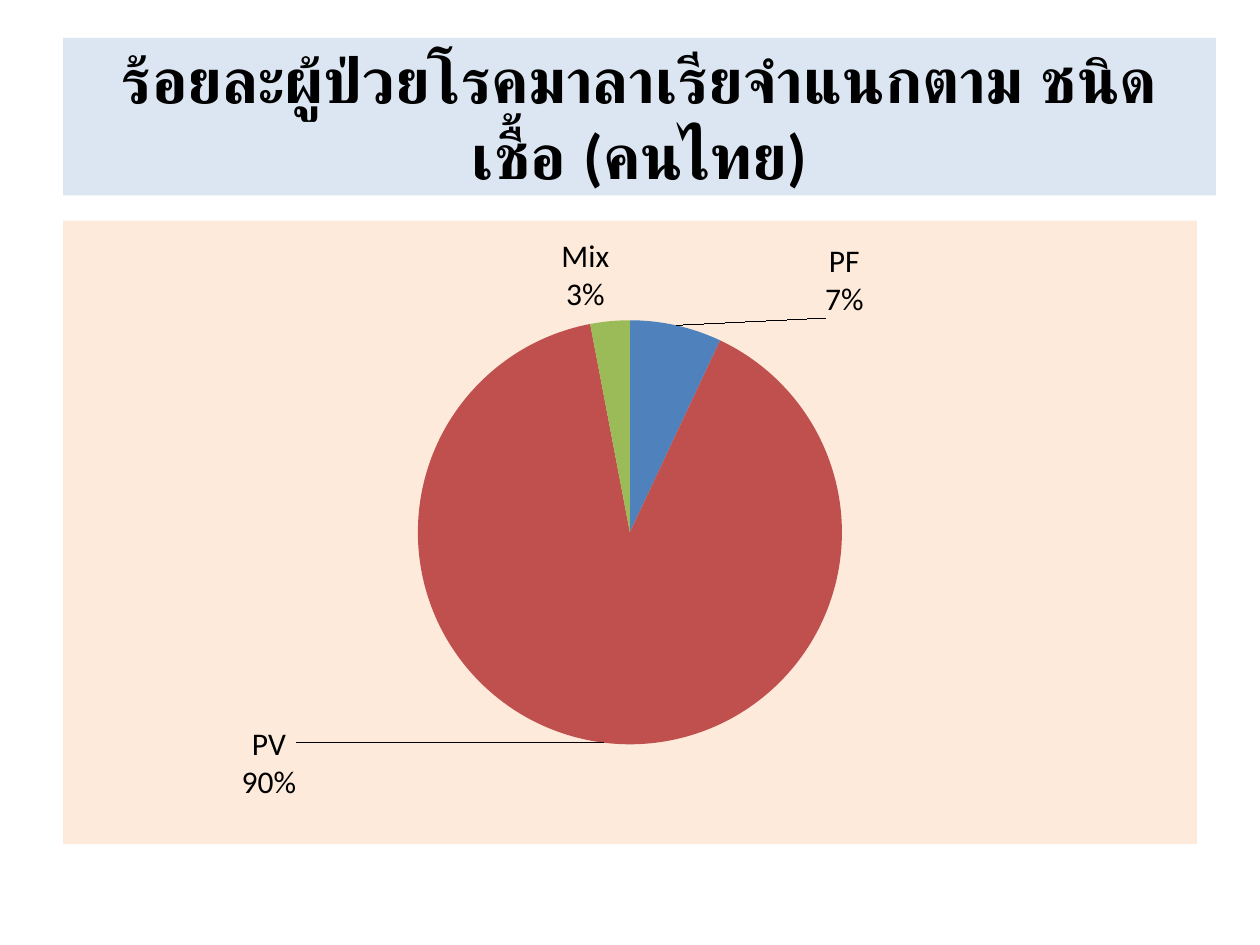
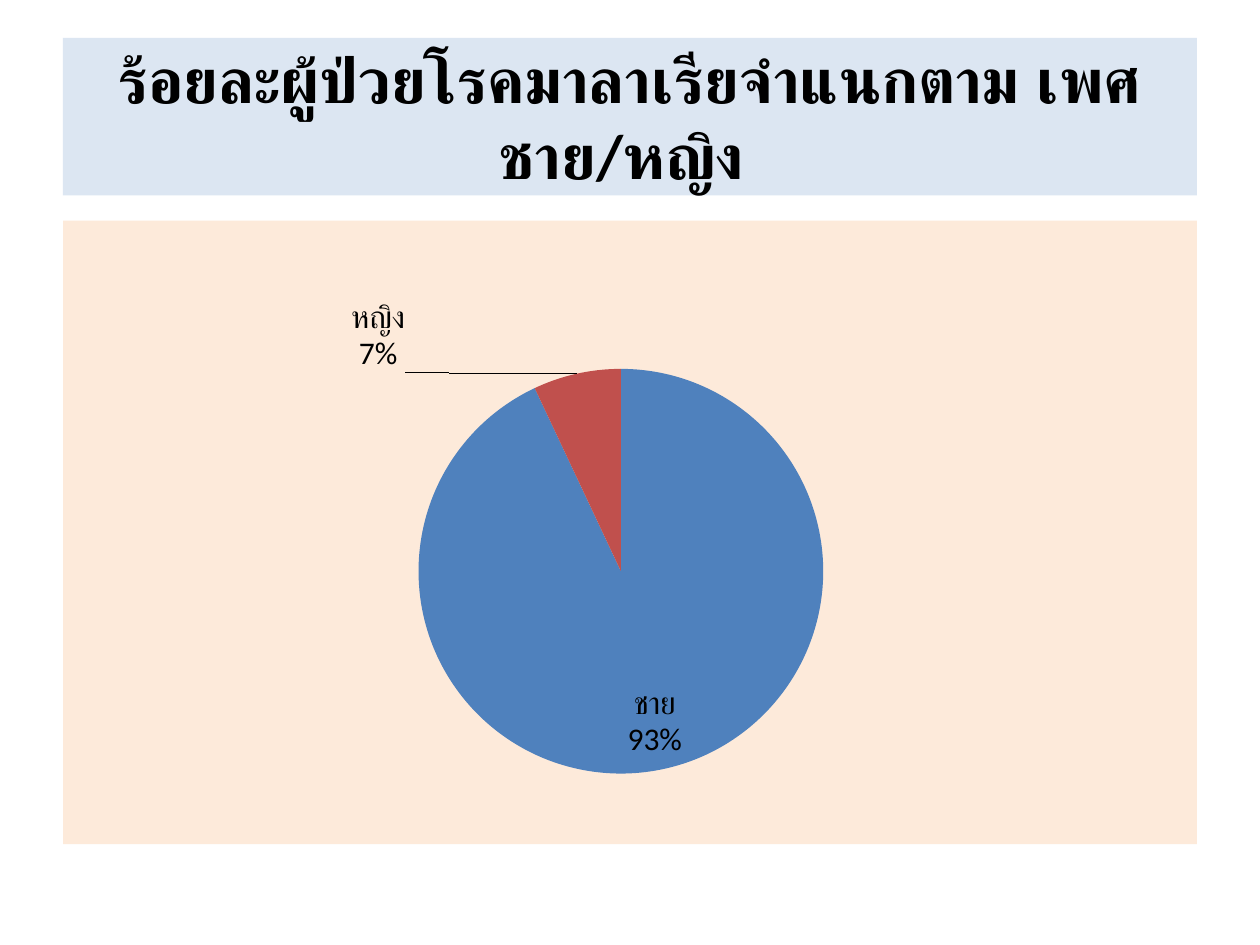
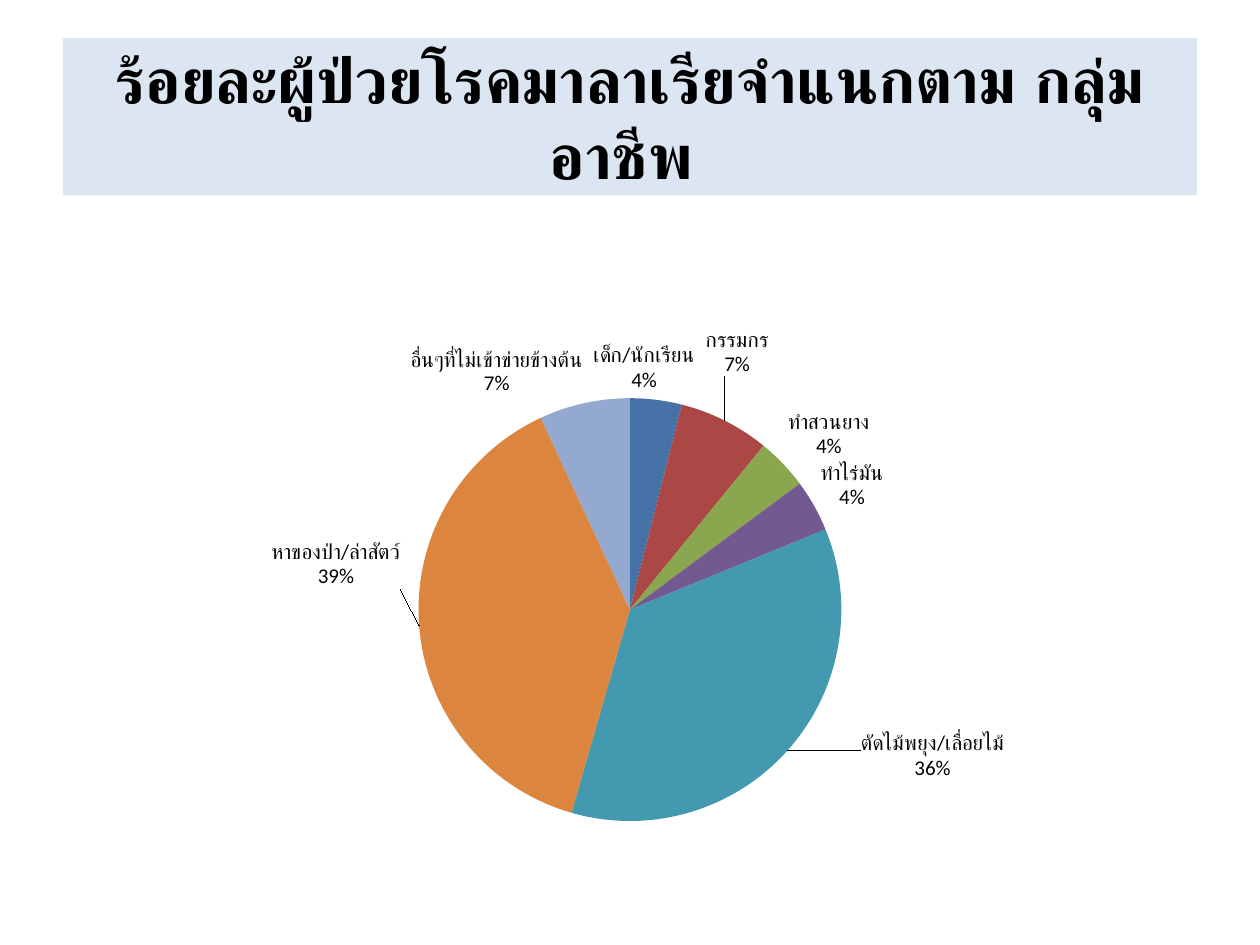
from dataclasses import dataclass

from lxml import etree
from pptx import Presentation
from pptx import util as u
from pptx.chart.data import CategoryChartData
from pptx.dml.color import RGBColor
from pptx.enum import chart as charts, lang, shapes, text
from pptx.oxml import parse_xml
from pptx.oxml.ns import nsdecls, qn


@dataclass(frozen=True)
class Theme:
    font: str = "Calibri"
    ink: str = "000000"
    band: str = "DCE6F2"
    panel: str = "FDEADA"
    title_size: int = 36
    label_size: int = 18
    small_label_size: int = 12
    slices: tuple = ("4F81BD", "C0504D", "9BBB59")
    job_slices: tuple = ("4672A8", "AB4744", "8AA64F", "725990",
                         "4299B0", "DC853E", "93A9CF")


THEME = Theme()
WIDTH, HEIGHT = u.Inches(10), u.Inches(7.5)

# Shares of the slide: left, top, width, height
BAND = (0.05, 0.04, 0.9, 1 / 6)
WIDE_BAND = (0.05, 0.04, 0.915, 1 / 6)
CHART = (0.05, 0.7 / 3, 0.9, 0.66)


def place(shares):
    """Turn shares of the slide into lengths."""
    return [int(share * side) for share, side in zip(shares, (WIDTH, HEIGHT) * 2)]


def style_font(font, size, bold=False, color=THEME.ink):
    font.name, font.size, font.bold = THEME.font, u.Pt(size), bold
    font.color.rgb = RGBColor.from_string(color)


def write(frame, words, size, bold=False, align=text.PP_ALIGN.CENTER):
    frame.word_wrap = True
    frame.vertical_anchor = text.MSO_ANCHOR.MIDDLE
    paragraph = frame.paragraphs[0]
    paragraph.alignment = align
    run = paragraph.add_run()
    run.text = words
    style_font(run.font, size, bold)
    run.font.language_id = lang.MSO_LANGUAGE_ID.THAI


def add_title_band(slide, words, area=BAND):
    band = slide.shapes.add_shape(shapes.MSO_SHAPE.RECTANGLE, *place(area))
    band.shadow.inherit = False
    band.fill.solid()
    band.fill.fore_color.rgb = RGBColor.from_string(THEME.band)
    band.line.fill.background()
    write(band.text_frame, words, THEME.title_size, bold=True)


def manual_layout(x, y, size=None):
    """Plot area when a size is given, otherwise a label's offset."""
    parts = [("x", x), ("y", y)]
    if size:
        parts = ([("layoutTarget", "inner"), ("xMode", "edge"), ("yMode", "edge")]
                 + parts + list(zip("wh", size)))
    body = "".join(f'<c:{tag} val="{value}"/>' for tag, value in parts)
    return parse_xml(f'<c:layout {nsdecls("c")}><c:manualLayout>{body}'
                     '</c:manualLayout></c:layout>')


def show_name_and_percent(label):
    """Show category over percentage on a c:dLbls or c:dLbl element."""
    for tag in ("LegendKey", "Val", "CatName", "SerName", "Percent", "BubbleSize"):
        flag = label.find(qn(f"c:show{tag}"))
        if flag is not None:
            flag.set("val", str(int(tag in ("CatName", "Percent"))))
            last = flag
    separator = etree.Element(qn("c:separator"))
    separator.text = "\n"
    last.addnext(separator)


def fill_chart(chart, color):
    style = parse_xml(f'<c:spPr {nsdecls("c", "a")}><a:solidFill>'
                      f'<a:srgbClr val="{color}"/></a:solidFill>'
                      '<a:ln><a:noFill/></a:ln></c:spPr>')
    chart._chartSpace.find(qn("c:chart")).addnext(style)


def add_pie(slide, shares, colors, plot, moved, size=THEME.label_size, panel=None):
    """moved maps a slice's index to its label's offset in shares of the chart."""
    data = CategoryChartData()
    data.categories = list(shares)
    data.add_series("Series 1", list(shares.values()))
    chart = slide.shapes.add_chart(
        charts.XL_CHART_TYPE.PIE, *place(CHART), data).chart
    chart.has_legend = chart.has_title = False
    style_font(chart.font, size)
    if panel:
        fill_chart(chart, panel)

    # Plot area
    area = chart._chartSpace.find(qn("c:chart")).find(qn("c:plotArea"))
    for old in area.findall(qn("c:layout")):
        area.remove(old)
    x, y, *extent = plot
    area.insert(0, manual_layout(x, y, extent))

    # Slices
    pie = chart.plots[0]
    pie.vary_by_categories = True
    series = pie.series[0]
    for index, color in zip(range(len(shares)), colors):
        fill = series.points[index].format.fill
        fill.solid()
        fill.fore_color.rgb = RGBColor.from_string(color)

    # Labels
    best_fit = charts.XL_LABEL_POSITION.BEST_FIT
    labels = series.data_labels
    labels.position = best_fit
    show_name_and_percent(labels._element)
    for index, offset in moved.items():
        series.points[index].data_label.position = best_fit
    for label in labels._element.findall(qn("c:dLbl")):
        index = label.find(qn("c:idx"))
        index.addnext(manual_layout(*moved[int(index.get("val"))]))
        show_name_and_percent(label)


def main():
    deck = Presentation()
    deck.slide_width, deck.slide_height = WIDTH, HEIGHT
    species, sex, jobs = (deck.slides.add_slide(deck.slide_layouts[6])
                          for _ in range(3))
    topic = "ร้อยละผู้ป่วยโรคมาลาเรียจำแนกตาม "

    # Cases by parasite species
    add_title_band(species, topic + "ชนิดเชื้อ (คนไทย)", WIDE_BAND)
    add_pie(species, {"PF": 7, "PV": 90, "Mix": 3}, THEME.slices,
            plot=(0.09, 0.16, 0.82, 0.68),
            moved={0: (0.13, 0), 1: (-0.27, -0.04)}, panel=THEME.panel)

    # Cases by sex
    add_title_band(sex, topic + "เพศชาย/หญิง ")
    add_pie(sex, {"ชาย": 93, "หญิง": 7}, THEME.slices,
            plot=(0.085, 0.238, 0.814, 0.649),
            moved={1: (-0.15, 0.01)}, panel=THEME.panel)

    # Cases by occupation
    add_title_band(jobs, topic + "กลุ่มอาชีพ ")
    add_pie(jobs, {"เด็ก/นักเรียน": 4, "กรรมกร": 7, "ทำสวนยาง": 4, "ทำไร่มัน": 4,
                   "ตัดไม้พยุง/เลื่อยไม้": 36, "หาของป่า/ล่าสัตว์": 39,
                   "อื่นๆที่ไม่เข้าข่ายข้างต้น": 7}, THEME.job_slices,
            plot=(0.093, 0.285, 0.814, 0.678),
            moved={1: (-0.02, -0.06), 4: (0.06, -0.04), 5: (-0.01, -0.1)},
            size=THEME.small_label_size)

    deck.save("out.pptx")


if __name__ == "__main__":
    main()
